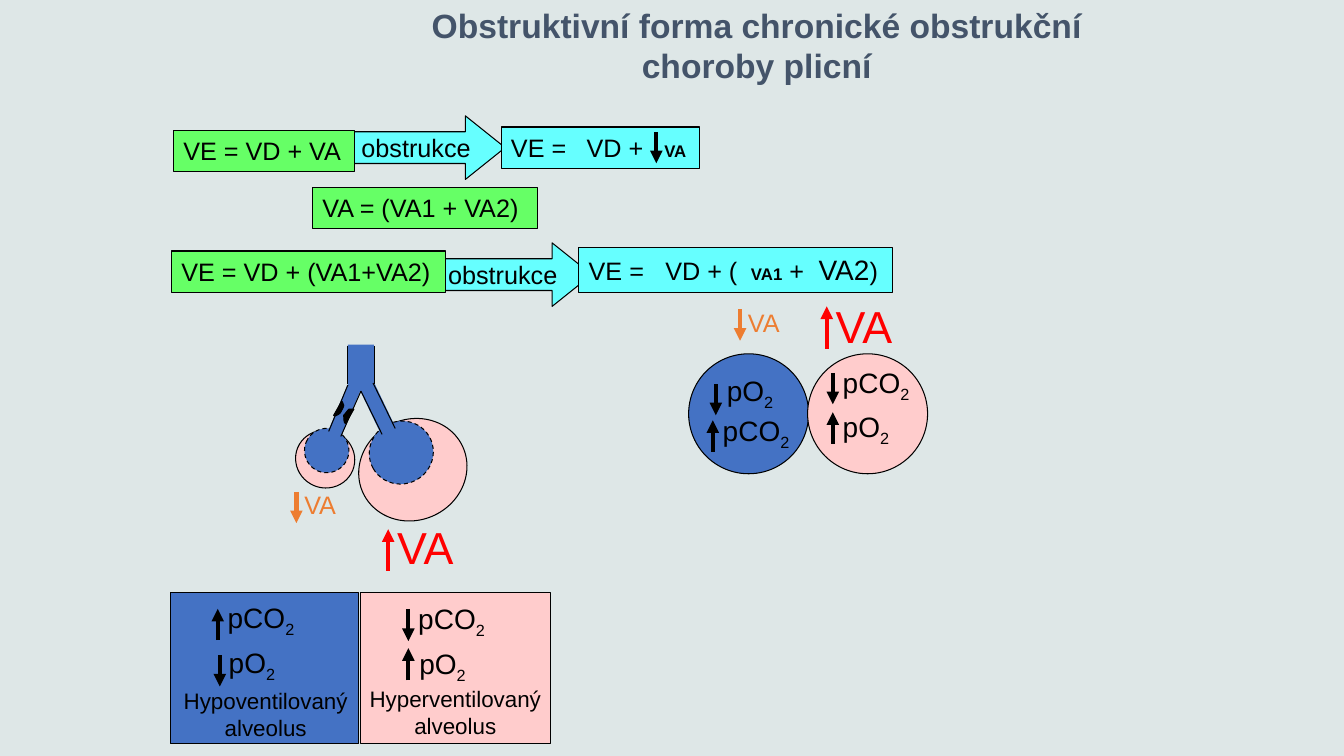
from lxml import etree
from pptx import Presentation
from pptx.dml.color import RGBColor
from pptx.enum.dml import MSO_LINE
from pptx.enum.shapes import MSO_CONNECTOR, MSO_SHAPE
from pptx.enum.text import MSO_ANCHOR, PP_ALIGN
from pptx.oxml.ns import qn
from pptx.util import Inches, Pt

RECT, OVAL, BLOCK_ARROW = MSO_SHAPE.RECTANGLE, MSO_SHAPE.OVAL, MSO_SHAPE.RIGHT_ARROW
LEFT, CENTER = PP_ALIGN.LEFT, PP_ALIGN.CENTER
STRAIGHT, DASH, MIDDLE = MSO_CONNECTOR.STRAIGHT, MSO_LINE.DASH, MSO_ANCHOR.MIDDLE

BACKGROUND = RGBColor(0xDE, 0xE7, 0xE7)
BLACK = RGBColor(0, 0, 0)
BLUE = RGBColor(0x44, 0x72, 0xC4)
PINK = RGBColor(0xFF, 0xCC, 0xCC)
GREEN = RGBColor(0x66, 0xFF, 0x66)
CYAN = RGBColor(0x66, 0xFF, 0xFF)
ORANGE = RGBColor(0xED, 0x7D, 0x31)
RED = RGBColor(0xFF, 0, 0)
TITLE_COLOR = RGBColor(0x44, 0x54, 0x6A)

TITLE = "Obstruktivní forma chronické obstrukční choroby plicní"

# Equations: box, fill, runs (text, size, bold), tab stops
EQUATIONS = [
    ((3.1, 1.86, 2.23, 0.41), GREEN, [("VA = (VA1 + VA2)", 18, False)], []),
    ((1.7, 2.49, 2.72, 0.41), GREEN, [("VE = VD + (VA1+VA2)", 18, False)], []),
    ((5.74, 2.46, 3.11, 0.44), CYAN,
     [("VE =\tVD + (\t", 18, False), ("VA1", 12, True), (" +\t", 18, False),
      ("VA2", 20, False), (")", 18, False)], [0.76, 1.61, 2.28]),
    ((4.97, 1.26, 1.97, 0.41), CYAN,
     [("VE =\tVD +\t", 18, False), ("VA", 12, True)], [0.75, 1.52]),
    ((1.72, 1.29, 1.8, 0.41), GREEN, [("VE = VD + VA", 18, False)], []),
]
OBSTRUCTIONS = [(4.3, 2.41), (3.44, 1.15)]

# Alveoli: kind, box, fill
ALVEOLI = [
    (OVAL, (6.83, 3.51, 1.19, 1.19), BLUE),
    (OVAL, (8.01, 3.51, 1.19, 1.19), PINK),
    (RECT, (1.69, 5.88, 1.87, 1.5), BLUE),
    (RECT, (3.58, 5.88, 1.88, 1.5), PINK),
]
CAPTIONS = [
    ("Hypoventilovaný alveolus", (1.69, 6.77, 1.89, 0.64)),
    ("Hyperventilovaný alveolus", (3.49, 6.75, 2.05, 0.64)),
]

# Gas pressures: text, left, top, arrow x, arrow start, arrow tip
GASES = [
    ("pCO", 2.16, 5.91, 2.16, 6.35, 6.04),
    ("pO", 2.17, 6.35, 2.18, 6.5, 6.81),
    ("pCO", 4.05, 5.92, 4.05, 6.04, 6.36),
    ("pO", 4.06, 6.36, 4.05, 6.75, 6.43),
    ("pO", 7.11, 3.66, 7.1, 3.81, 4.12),
    ("pCO", 7.07, 4.05, 7.07, 4.48, 4.17),
    ("pCO", 8.26, 3.58, 8.26, 3.7, 4.01),
    ("pO", 8.26, 4.01, 8.26, 4.4, 4.09),
]
GAS_WIDTH = {"pCO": 0.94, "pO": 0.71}

# Ventilation: text box, size, colour, arrow x, arrow start, arrow tip
VENTILATION = [
    ((2.92, 4.81, 0.53, 0.4), 18, ORANGE, 2.94, 4.88, 5.19),
    ((3.84, 5.11, 0.8, 0.63), 32, RED, 3.85, 5.66, 5.25),
    ((7.32, 3, 0.53, 0.4), 18, ORANGE, 7.34, 3.07, 3.38),
    ((8.19, 2.91, 0.8, 0.63), 32, RED, 8.2, 3.46, 3.04),
]

# Airways: kind, box, fill, rotation, outline ("solid", "dash" or None)
AIRWAYS = [
    (OVAL, (2.93, 4.27, 0.59, 0.57), PINK, 22.8, "solid"),
    (OVAL, (3.55, 4.16, 1.09, 1), PINK, 334.5, "solid"),
    (RECT, (3.45, 3.42, 0.26, 0.47), BLUE, 0, None),
    (OVAL, (3.02, 4.25, 0.44, 0.44), BLUE, 23, "dash"),
    (RECT, (3.32, 3.82, 0.14, 0.63), BLUE, 22.8, None),
    (OVAL, (3.66, 4.18, 0.64, 0.62), BLUE, 330.8, "dash"),
    (RECT, (3.7, 3.81, 0.16, 0.63), BLUE, 334.5, None),
]
AIRWAY_WALLS = [
    (3.45, 3.43, 3.45, 3.81), (3.71, 3.43, 3.71, 3.81),
    (3.26, 4.28, 3.45, 3.82), (3.38, 4.33, 3.58, 3.88),
    (3.92, 4.25, 3.7, 3.8), (3.79, 4.31, 3.58, 3.88),
]
# Plugs in the narrowed bronchus: start, then Bezier segments
PLUGS = [
    ((3.39, 3.98), [((3.4, 3.99), (3.4, 4), (3.41, 4.02)),
                    ((3.41, 4.04), (3.39, 4.07), (3.38, 4.09)),
                    ((3.37, 4.11), (3.31, 4.14), (3.31, 4.12))]),
    ((3.51, 4.06), [((3.49, 4.06), (3.48, 4.06), (3.46, 4.06)),
                    ((3.45, 4.07), (3.42, 4.11), (3.41, 4.12)),
                    ((3.41, 4.14), (3.41, 4.21), (3.43, 4.2))]),
]
CURVE_STEPS = 6

prs = Presentation()
prs.slide_width, prs.slide_height = Inches(13.33), Inches(7.5)
s = prs.slides.add_slide(prs.slide_layouts[6])
s.background.fill.solid()
s.background.fill.fore_color.rgb = BACKGROUND


def paint(sp, fill, outline="solid"):
    sp.shadow.inherit = False
    sp.fill.solid()
    sp.fill.fore_color.rgb = fill
    if outline is None:
        sp.line.fill.background()
        return
    sp.line.color.rgb = BLACK
    sp.line.width = Pt(0.75)
    if outline == "dash":
        sp.line.dash_style = DASH


def add_shape(kind, box, fill, rotation=0, outline="solid"):
    sp = s.shapes.add_shape(kind, *map(Inches, box))
    sp.rotation = rotation
    paint(sp, fill, outline)
    return sp


def write(sp, text, size, color=BLACK, align=LEFT, wrap=True):
    tf = sp.text_frame
    tf.word_wrap = wrap
    p = tf.paragraphs[0]
    p.alignment = align
    p.font.size, p.font.name, p.font.color.rgb = Pt(size), "Arial", color
    if text:
        p.add_run().text = text
    return p


def add_text(box, *style, **options):
    return write(s.shapes.add_textbox(*map(Inches, box)), *style, **options)


def add_line(x1, y1, x2, y2, color=BLACK, width=0.75, arrow=False):
    line = s.shapes.add_connector(STRAIGHT, *map(Inches, (x1, y1, x2, y2)))
    line.line.color.rgb = color
    line.line.width = Pt(width)
    if arrow:
        etree.SubElement(line.line._get_or_add_ln(), qn("a:tailEnd"), type="triangle")
    etree.SubElement(line._element.spPr, qn("a:effectLst"))


def add_arrow(x, start, tip, color=BLACK):
    add_line(x, start, x, tip, color, 3, True)


def bezier(points, t):
    weights = ((1 - t) ** 3, 3 * t * (1 - t) ** 2, 3 * t * t * (1 - t), t ** 3)
    return tuple(Inches(sum(w * pt[i] for w, pt in zip(weights, points))) for i in (0, 1))


# Alveoli and obstruction arrows
for alveolus in ALVEOLI:
    add_shape(*alveolus)
for left, top in OBSTRUCTIONS:
    sp = add_shape(BLOCK_ARROW, (left, top, 1.57, 0.63), CYAN)
    sp.adjustments[0], sp.adjustments[1] = 0.5, 0.625
    sp.text_frame.vertical_anchor = MIDDLE
    write(sp, "obstrukce", 18, align=CENTER, wrap=False)

# Equations
for box, fill, runs, stops in EQUATIONS:
    sp = add_shape(RECT, box, fill)
    sp.text_frame.margin_right = 0
    sp.text_frame.vertical_anchor = MSO_ANCHOR.TOP
    p = write(sp, "", 18)
    for text, size, bold in runs:
        r = p.add_run()
        r.text, r.font.size, r.font.bold = text, Pt(size), bold
    if stops:
        tabs = etree.Element(qn("a:tabLst"))
        for stop in stops:
            etree.SubElement(tabs, qn("a:tab"), pos=str(Inches(stop)), algn="l")
        p._p.pPr.find(qn("a:defRPr")).addprevious(tabs)
add_arrow(6.51, 1.31, 1.62)

# Airways with the plugs
for airway in AIRWAYS:
    add_shape(*airway)
for wall in AIRWAY_WALLS:
    add_line(*wall)
for start, segments in PLUGS:
    builder = s.shapes.build_freeform(*map(Inches, start))
    for segment in segments:
        builder.add_line_segments(
            [bezier((start, *segment), i / CURVE_STEPS) for i in range(1, CURVE_STEPS + 1)],
            close=segment is segments[-1])
        start = segment[-1]
    paint(builder.convert_to_shape(), BLACK)

# Labels and their arrows
for text, left, top, *arrow in GASES:
    p = add_text((left, top, GAS_WIDTH[text], 0.43), text, 20)
    r = p.add_run()
    r.text = "2"
    r._r.get_or_add_rPr().set("baseline", "-25000")
    add_arrow(*arrow)
for box, size, color, *arrow in VENTILATION:
    add_text(box, "VA", size, color, wrap=False)
    add_arrow(*arrow, color)
for text, box in CAPTIONS:
    add_text(box, text, 16, align=CENTER)

# Title
add_text((4.07, 0, 6.87, 0.91), TITLE, 24, TITLE_COLOR, CENTER).font.bold = True

prs.save("out.pptx")
